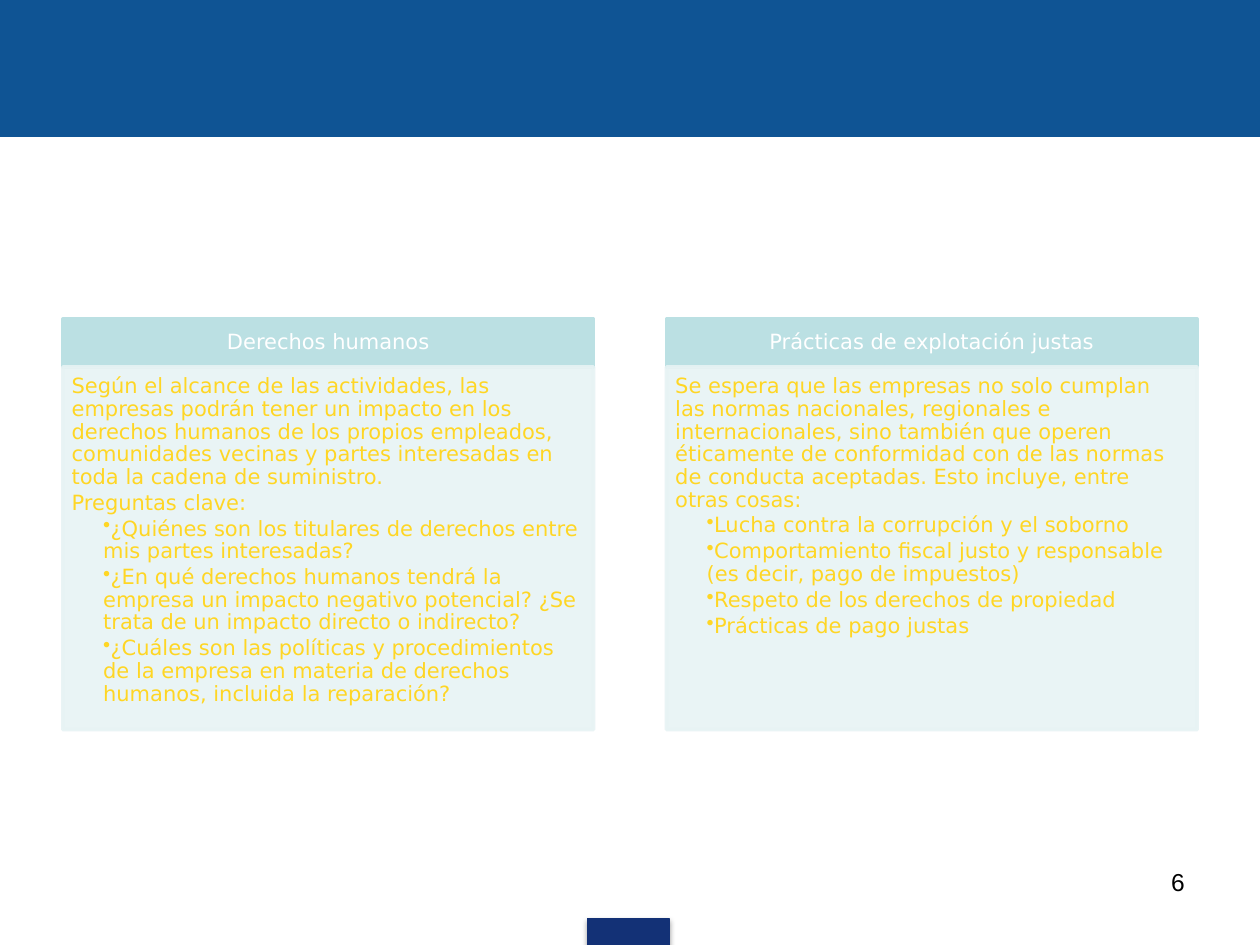
from lxml import etree
from pptx import Presentation
from pptx import util as u
from pptx.dml.color import RGBColor
from pptx.enum import shapes, text
from pptx.oxml import ns

COLORS = {
    "banner": "0F5494",
    "tab": "133176",
    "header": "BBE0E3",
    "panel": "E7F3F4",
    "heading": "FFFFFF",
    "body": "FFD624",
    "number": "000000",
    "shadow": "000000",
}
LEFT, TOP, WIDTH = 36, 182.2, 303.2
HEADER_HEIGHT, PANEL_HEIGHT = 27.4, 207.4
COLUMN_STEP = 344.9
BULLET_INDENT = 18

# Each column: heading, plain paragraphs, bulleted paragraphs
COLUMNS = [
    (
        "Derechos humanos",
        [
            "Según el alcance de las actividades, las empresas podrán tener un "
            "impacto en los derechos humanos de los propios empleados, comunidades "
            "vecinas y partes interesadas en toda la cadena de suministro.",
            "Preguntas clave:",
        ],
        [
            "¿Quiénes son los titulares de derechos entre mis partes interesadas?",
            "¿En qué derechos humanos tendrá la empresa un impacto negativo "
            "potencial? ¿Se trata de un impacto directo o indirecto?",
            "¿Cuáles son las políticas y procedimientos de la empresa en materia "
            "de derechos humanos, incluida la reparación?",
        ],
    ),
    (
        "Prácticas de explotación justas",
        [
            "Se espera que las empresas no solo cumplan las normas nacionales, "
            "regionales e internacionales, sino también que operen éticamente de "
            "conformidad con de las normas de conducta aceptadas. Esto incluye, "
            "entre otras cosas:",
        ],
        [
            "Lucha contra la corrupción y el soborno",
            "Comportamiento fiscal justo y responsable (es decir, pago de impuestos)",
            "Respeto de los derechos de propiedad",
            "Prácticas de pago justas",
        ],
    ),
]


def add_child(parent, tag, **attributes):
    child = etree.SubElement(parent, ns.qn(tag))
    for name, value in attributes.items():
        child.set(name, str(value))
    return child


class SlideBuilder:
    def __init__(self, slide, font="DejaVu Sans", size=12):
        self.slide = slide
        self.font = font
        self.size = size

    def rectangle(self, left, top, width, height, color, line=0.75, opacity=100):
        box = self.slide.shapes.add_shape(
            shapes.MSO_SHAPE.RECTANGLE,
            u.Pt(left), u.Pt(top), u.Pt(width), u.Pt(height),
        )
        box.shadow.inherit = False
        box.fill.solid()
        box.line.width = u.Pt(line)
        for paint in (box.fill.fore_color, box.line.color):
            paint.rgb = RGBColor.from_string(COLORS[color])
        if opacity < 100:
            for value in box._element.spPr.iter(ns.qn("a:srgbClr")):
                add_child(value, "a:alpha", val=opacity * 1000)
        return box

    def drop_shadow(self, box, blur, distance, opacity):
        effects = box._element.spPr.find(ns.qn("a:effectLst"))
        shadow = add_child(
            effects, "a:outerShdw", blurRad=u.Pt(blur), dist=u.Pt(distance),
            dir=90 * 60000, rotWithShape=0,
        )
        value = add_child(shadow, "a:srgbClr", val=COLORS["shadow"])
        add_child(value, "a:alpha", val=opacity * 1000)

    def frame(self, box, insets, anchor):
        """Set wrapping, anchor and the left, top, right and bottom insets."""
        frame = box.text_frame
        frame.word_wrap = True
        frame.vertical_anchor = anchor
        (frame.margin_left, frame.margin_top,
         frame.margin_right, frame.margin_bottom) = map(u.Pt, insets)
        return frame

    def paragraph(self, frame, words, color, align=text.PP_ALIGN.LEFT,
                  after=0, spacing=0.9, bullet=False, font=None, size=None):
        first = frame.paragraphs[0]
        para = frame.add_paragraph() if first.runs else first
        properties = para._p.get_or_add_pPr()
        properties.set("marL", str(u.Pt(BULLET_INDENT if bullet else 0)))
        properties.set("indent", "0")
        if bullet:
            add_child(properties, "a:buChar", char="•")
        else:
            add_child(properties, "a:buNone")
        para.alignment = align
        para.line_spacing = spacing
        para.space_after = u.Pt(after)
        span = para.add_run()
        span.text = words
        span.font.name = font or self.font
        span.font.size = u.Pt(size or self.size)
        span.font.color.rgb = RGBColor.from_string(COLORS[color])

    def column(self, left, heading, plain, bulleted):
        header = self.rectangle(left, TOP, WIDTH, HEADER_HEIGHT, "header", line=2)
        frame = self.frame(header, (6.7, 3.8, 6.7, 3.8), text.MSO_ANCHOR.MIDDLE)
        self.paragraph(frame, heading, "heading", text.PP_ALIGN.CENTER)

        panel = self.rectangle(left, TOP + HEADER_HEIGHT, WIDTH, PANEL_HEIGHT,
                               "panel", line=2, opacity=90)
        frame = self.frame(panel, (5, 5, 6.7, 7.5), text.MSO_ANCHOR.TOP)
        for words in plain:
            self.paragraph(frame, words, "body", after=1.8)
        for words in bulleted:
            self.paragraph(frame, words, "body", after=1.8, bullet=True)

    def page_number(self, number):
        box = self.slide.shapes.add_textbox(
            u.Pt(516), u.Pt(491.75), u.Pt(168), u.Pt(37.5))
        frame = self.frame(box, (7.2, 3.6, 7.2, 3.6), text.MSO_ANCHOR.TOP)
        self.paragraph(frame, number, "number", text.PP_ALIGN.RIGHT,
                       spacing=1.0, font="Arial", size=14)


def main():
    deck = Presentation()
    deck.slide_width, deck.slide_height = u.Pt(720), u.Pt(540)
    page = SlideBuilder(deck.slides.add_slide(deck.slide_layouts[6]))
    page.rectangle(0, 0, 720, 78, "banner")
    tab = page.rectangle(335.6, 524.9, 46.8, 15.1, "tab")
    page.drop_shadow(tab, blur=3.1, distance=1.8, opacity=35)
    for index, column in enumerate(COLUMNS):
        page.column(LEFT + index * COLUMN_STEP, *column)
    page.page_number("6")
    deck.save("out.pptx")


if __name__ == "__main__":
    main()
